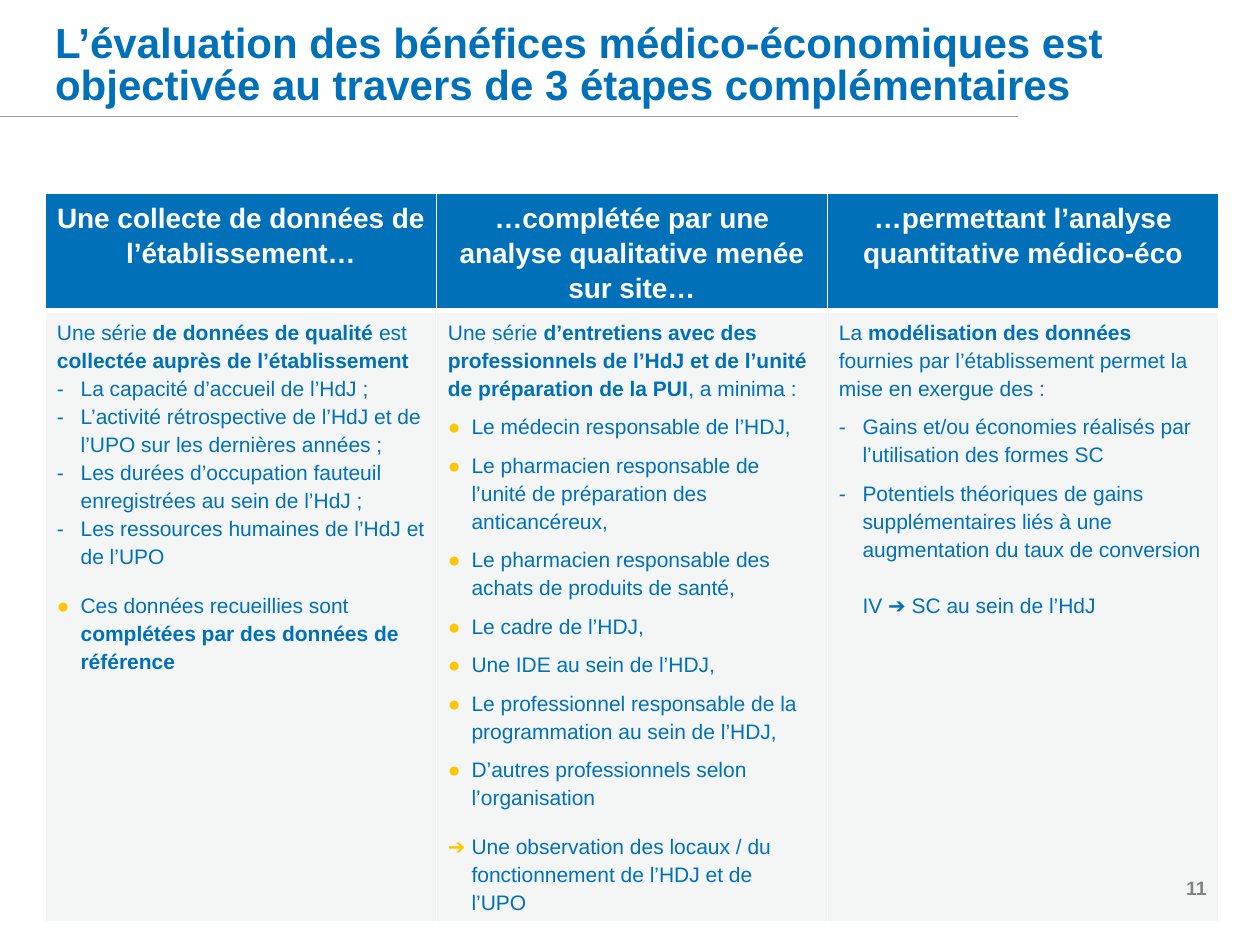
from lxml.etree import SubElement
from pptx import Presentation
from pptx.dml.color import RGBColor
from pptx.enum.shapes import MSO_CONNECTOR
from pptx.enum.text import MSO_ANCHOR, MSO_AUTO_SIZE, PP_ALIGN
from pptx.oxml.ns import qn
from pptx.util import Pt

COLORS = {
    "blue": "0071B9",
    "yellow": "FDC600",
    "gray": "9C9E9F",
    "number": "808080",
    "white": "FFFFFF",
}
FONT = "Arial"
INDENT = 13.5
DASH = {"bullet": "-"}
DASH_SPACED = {"bullet": "-", "after": 6}
DOT = {"bullet": "●", "bullet_color": "yellow"}
DOT_SPACED = {**DOT, "after": 6}
INTRO = {"after": 6}

STEPS = [
    ("Une collecte de données de l’établissement…", [
        ("Une série *de données de qualité *est *collectée auprès de l’établissement*", {}),
        ("La capacité d’accueil de l’HdJ ;", DASH),
        ("L’activité rétrospective de l’HdJ et de l’UPO sur les dernières années ;", DASH),
        ("Les durées d’occupation fauteuil enregistrées au sein de l’HdJ ;", DASH),
        ("Les ressources humaines de l’HdJ et de l’UPO", DASH),
        ("Ces données recueillies sont *complétées par des données de référence*",
         {**DOT, "before": 12}),
    ]),
    ("…complétée par une analyse qualitative menée sur site…", [
        ("Une série *d’entretiens avec des professionnels de l’HdJ et de l’unité "
         "de préparation de la PUI*, a minima :", INTRO),
        ("Le médecin responsable de l’HDJ,", DOT_SPACED),
        ("Le pharmacien responsable de l’unité de préparation des anticancéreux,", DOT_SPACED),
        ("Le pharmacien responsable des achats de produits de santé,", DOT_SPACED),
        ("Le cadre de l’HDJ,", DOT_SPACED),
        ("Une IDE au sein de l’HDJ,", DOT_SPACED),
        ("Le professionnel responsable de la programmation au sein de l’HDJ,", DOT_SPACED),
        ("D’autres professionnels selon l’organisation", DOT),
        ("Une observation des locaux / du fonctionnement de l’HDJ et de  l’UPO",
         {**DOT, "bullet": "➔", "before": 12}),
    ]),
    ("…permettant l’analyse quantitative médico-éco", [
        ("La *modélisation des données *fournies par l’établissement permet "
         "la mise en exergue des :", INTRO),
        ("Gains et/ou économies réalisés par l’utilisation des formes SC", DASH_SPACED),
        ("Potentiels théoriques de gains supplémentaires liés à une "
         "augmentation du taux de conversion", DASH),
        ("IV ➔ SC au sein de l’HdJ", {"indented": True, "before": 16}),
    ]),
]


def rgb(name):
    return RGBColor.from_string(COLORS[name])


def set_attributes(target, values):
    for name, value in values.items():
        setattr(target, name, value)


def write_runs(paragraph, text, size, color, bold=False):
    for index, part in enumerate(text.split("*")):
        if part:
            run = paragraph.add_run()
            run.text = part
            set_attributes(run.font, {
                "name": FONT, "size": Pt(size), "bold": bold or index % 2 == 1})
            run.font.color.rgb = rgb(color)


def add_bullet(paragraph, bullet=None, bullet_color="blue", indented=False):
    properties = paragraph._p.get_or_add_pPr()
    if bullet or indented:
        properties.set("marL", str(Pt(INDENT)))
        properties.set("indent", str(Pt(-INDENT if bullet else 0)))
    if bullet:
        color = SubElement(properties, qn("a:buClr"))
        SubElement(color, qn("a:srgbClr"), val=COLORS[bullet_color])
        SubElement(properties, qn("a:buFont"), typeface=FONT)
        SubElement(properties, qn("a:buChar"), char=bullet)


def format_cell(cell, color, opacity, bottom_width):
    set_attributes(cell, {
        "margin_left": Pt(6.6), "margin_right": Pt(6.6),
        "margin_top": Pt(3.6), "margin_bottom": Pt(3.6),
        "vertical_anchor": MSO_ANCHOR.TOP})
    properties = cell._tc.get_or_add_tcPr()
    for side, width in {"L": 1, "R": 1, "T": 1, "B": bottom_width}.items():
        border = SubElement(properties, qn(f"a:ln{side}"), w=str(Pt(width)))
        fill = SubElement(border, qn("a:solidFill"))
        SubElement(fill, qn("a:srgbClr"), val=COLORS["white"])
    cell.fill.solid()
    cell.fill.fore_color.rgb = rgb(color)
    if opacity < 100:
        shade = properties.find(qn("a:solidFill")).find(qn("a:srgbClr"))
        SubElement(shade, qn("a:alpha"), val=str(opacity * 1000))


def place_title(slide, left, top, width, height):
    title = slide.shapes.title
    set_attributes(title, {
        "left": Pt(left), "top": Pt(top), "width": Pt(width), "height": Pt(height)})
    set_attributes(title.text_frame, {
        "margin_left": 0, "margin_right": 0, "margin_top": 0, "margin_bottom": 0,
        "word_wrap": True, "auto_size": MSO_AUTO_SIZE.NONE,
        "vertical_anchor": MSO_ANCHOR.MIDDLE})
    heading = title.text_frame.paragraphs[0]
    set_attributes(heading, {"alignment": PP_ALIGN.LEFT, "line_spacing": Pt(24),
                             "space_before": Pt(0)})
    write_runs(heading, "L’évaluation des bénéfices médico-économiques est objectivée "
               "au travers de 3 étapes complémentaires", 24, "blue", True)


def place_rule(slide, left, top, width):
    rule = slide.shapes.add_connector(
        MSO_CONNECTOR.STRAIGHT, Pt(left), Pt(top), Pt(left + width), Pt(top))
    rule.line.color.rgb = rgb("gray")
    rule.line.width = Pt(1)
    SubElement(rule._element.spPr, qn("a:effectLst"))


def place_page_number(slide, left, top, width, height):
    page_number = slide.shapes.add_textbox(Pt(left), Pt(top), Pt(width), Pt(height))
    set_attributes(page_number.text_frame, {
        "margin_left": 0, "margin_right": 0, "margin_top": 0, "margin_bottom": 0,
        "word_wrap": True})
    paragraph = page_number.text_frame.paragraphs[0]
    paragraph.alignment = PP_ALIGN.RIGHT
    write_runs(paragraph, "11", 11.1, "number", True)


def place_steps(slide, left, top, width, row_heights):
    steps = slide.shapes.add_table(
        len(row_heights), len(STEPS), Pt(left), Pt(top), Pt(width), Pt(sum(row_heights))).table
    for row, height in zip(steps.rows, row_heights):
        row.height = Pt(height)
    for column, (heading, details) in enumerate(STEPS):
        steps.columns[column].width = Pt(width / len(STEPS))
        header, body = steps.cell(0, column), steps.cell(1, column)
        format_cell(header, "blue", 100, 3)
        format_cell(body, "gray", 10, 1)
        label = header.text_frame.paragraphs[0]
        set_attributes(label, {"alignment": PP_ALIGN.CENTER, "line_spacing": Pt(20)})
        write_runs(label, heading, 16, "white", True)
        for index, (text, style) in enumerate(details):
            frame = body.text_frame
            detail = frame.add_paragraph() if index else frame.paragraphs[0]
            set_attributes(detail, {
                "alignment": PP_ALIGN.LEFT, "line_spacing": Pt(16),
                "space_before": Pt(style.get("before", 0)),
                "space_after": Pt(style.get("after", 0))})
            add_bullet(detail, **{key: value for key, value in style.items()
                                  if key not in ("before", "after")})
            write_runs(detail, text, 12, "blue")


def main():
    presentation = Presentation()
    set_attributes(presentation, {"slide_width": Pt(720), "slide_height": Pt(540)})
    slide = presentation.slides.add_slide(presentation.slide_layouts[5])
    place_rule(slide, 0, 66.6, 582)
    place_page_number(slide, 31.5, 500.4, 658, 13)
    place_title(slide, 31.5, 8, 612, 61)
    place_steps(slide, 26, 110.2, 670.2, [62, 293])
    presentation.save("out.pptx")


if __name__ == "__main__":
    main()
